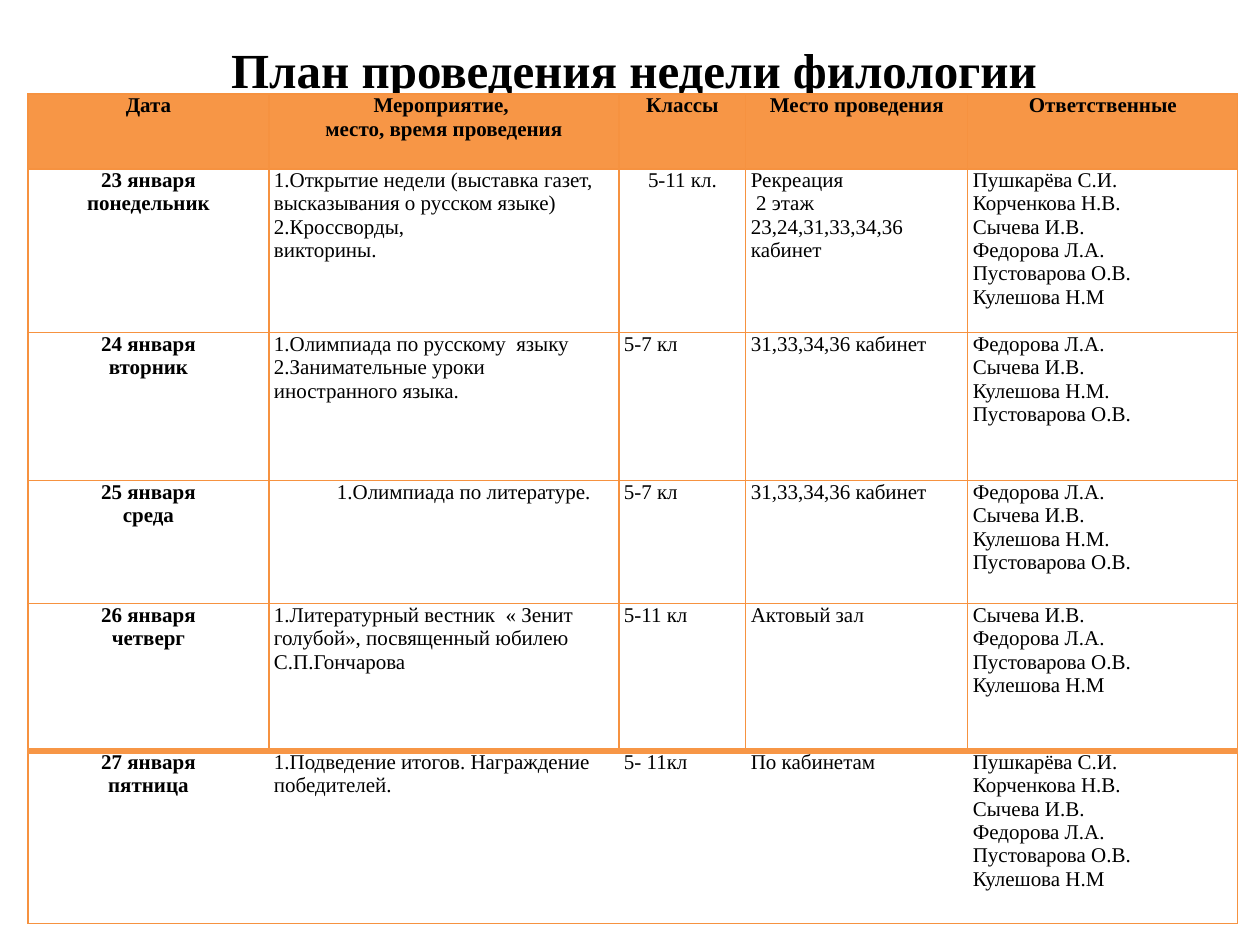
from lxml.etree import SubElement
from pptx import Presentation
from pptx.dml.color import RGBColor
from pptx.enum.text import MSO_ANCHOR, MSO_AUTO_SIZE, PP_ALIGN
from pptx.oxml.ns import qn
from pptx.util import Emu, Pt

EMU_PER_PX = 914400 // 126
ORANGE, LINE, BLACK = "F79646", "F69240", "000000"
THIN, THICK = (LINE, 0.75), (ORANGE, 4)


def px(length):
    return Emu(length * EMU_PER_PX)


def color(value):
    return RGBColor.from_string(value)


class Page:
    """Text style and the current slide."""
    font = "Times New Roman"

    def __init__(self, deck):
        self.slide = deck.slides.add_slide(deck.slide_layouts[5])

    def add_text(self, para, text, size, bold, align):
        para.alignment = align
        span = para.add_run()
        span.text = text
        span.font.name = self.font
        span.font.size = Pt(size)
        span.font.bold = bold
        span.font.color.rgb = color(BLACK)

    def title(self, text, left, top, width, height, margin_top):
        box = self.slide.shapes.title
        box.left, box.top = px(left), px(top)
        box.width, box.height = px(width), px(height)
        frame = box.text_frame
        frame.word_wrap = True
        frame.auto_size = MSO_AUTO_SIZE.NONE
        frame.vertical_anchor = MSO_ANCHOR.TOP
        frame.margin_top = px(margin_top)
        self.add_text(frame.paragraphs[0], text, 28, True, PP_ALIGN.CENTER)

    def table(self, left, top, widths, heights):
        frame = self.slide.shapes.add_table(
            len(heights), len(widths), px(left), px(top),
            px(sum(widths)), px(sum(heights)))
        table = frame.table
        table.first_row = table.horz_banding = False
        for column, width in zip(table.columns, widths):
            column.width = px(width)
        for row, height in zip(table.rows, heights):
            row.height = px(height)
        return table

    def border(self, cell, side, style):
        properties = cell._tc.get_or_add_tcPr()
        line = SubElement(properties, qn(f"a:ln{side}"))
        if style is None:
            SubElement(line, qn("a:noFill"))
            return
        value, width = style
        line.set("w", str(Pt(width)))
        fill = SubElement(line, qn("a:solidFill"))
        SubElement(fill, qn("a:srgbClr")).set("val", value)

    def cell(self, cell, lines, borders, fill=None, bold=False,
             align=PP_ALIGN.LEFT, indent=0):
        cell.margin_left = cell.margin_right = px(5)
        cell.margin_top = cell.margin_bottom = 0
        for side, style in borders.items():
            self.border(cell, side, style)
        if fill:
            cell.fill.solid()
            cell.fill.fore_color.rgb = color(fill)
        else:
            cell.fill.background()
        frame = cell.text_frame
        for number, text in enumerate(lines):
            para = frame.add_paragraph() if number else frame.paragraphs[0]
            if indent:
                para._p.get_or_add_pPr().set("marL", str(px(indent)))
            self.add_text(para, text, 12, bold, align)


# Schedule: each cell is a list of paragraphs
ALL_STAFF = ["Пушкарёва С.И.", "Корченкова Н.В.", "Сычева И.В.",
             "Федорова Л.А.", "Пустоварова О.В.", "Кулешова Н.М"]
OLYMPIAD_STAFF = ["Федорова Л.А.", "Сычева И.В.", "Кулешова Н.М.",
                  "Пустоварова О.В."]
ROOMS = ["31,33,34,36 кабинет"]
SCHEDULE = [
    [["Дата"], ["Мероприятие, ", "место, время проведения"], ["Классы"],
     ["Место проведения"], ["Ответственные"]],
    [["23 января", "понедельник"],
     ["1.Открытие недели (выставка газет, высказывания о русском языке)",
      "2.Кроссворды,", "викторины."],
     ["5-11 кл."],
     ["Рекреация", " 2 этаж", "23,24,31,33,34,36 кабинет"], ALL_STAFF],
    [["24 января", "вторник"],
     ["1.Олимпиада по русскому  языку",
      "2.Занимательные уроки иностранного языка."],
     ["5-7 кл"], ROOMS, OLYMPIAD_STAFF],
    [["25 января", "среда"], ["1.Олимпиада по литературе."],
     ["5-7 кл"], ROOMS, OLYMPIAD_STAFF],
    [["26 января", "четверг"],
     ["1.Литературный вестник  « Зенит голубой», посвященный юбилею "
      "С.П.Гончарова"],
     ["5-11 кл"], ["Актовый зал"],
     ["Сычева И.В.", "Федорова Л.А.", "Пустоварова О.В.", "Кулешова Н.М"]],
    [["27 января", "пятница"],
     ["1.Подведение итогов. Награждение победителей."],
     ["5- 11кл"], ["По кабинетам"], ALL_STAFF],
]
WIDTHS = [241, 350, 127, 222, 270]
HEIGHTS = [75, 164, 148, 123, 147, 173]
CENTERED, INDENTED = (1, 2), (3, 1)


def main():
    deck = Presentation()
    deck.slide_width, deck.slide_height = px(1260), px(945)
    page = Page(deck)

    # Heading
    page.title("План проведения недели филологии", 67, 16, 1134, 158, 23)

    # Week plan
    table = page.table(28, 94, WIDTHS, HEIGHTS)
    last_row, last_column = len(HEIGHTS) - 1, len(WIDTHS) - 1
    for r, row in enumerate(SCHEDULE):
        for c, lines in enumerate(row):
            # The last day has no inner verticals and a thick line above
            inner = None if r == last_row else THIN
            borders = {
                "L": THIN if c == 0 else inner,
                "R": THIN if c == last_column else inner,
                "T": THICK if r == last_row else THIN,
                "B": THICK if r == last_row - 1 else THIN,
            }
            heading = r == 0 or c == 0
            centered = heading or (r, c) == CENTERED
            page.cell(table.cell(r, c), lines, borders,
                      fill=ORANGE if r == 0 else None, bold=heading,
                      align=PP_ALIGN.CENTER if centered else PP_ALIGN.LEFT,
                      indent=63 if (r, c) == INDENTED else 0)

    deck.save("out.pptx")


if __name__ == "__main__":
    main()
